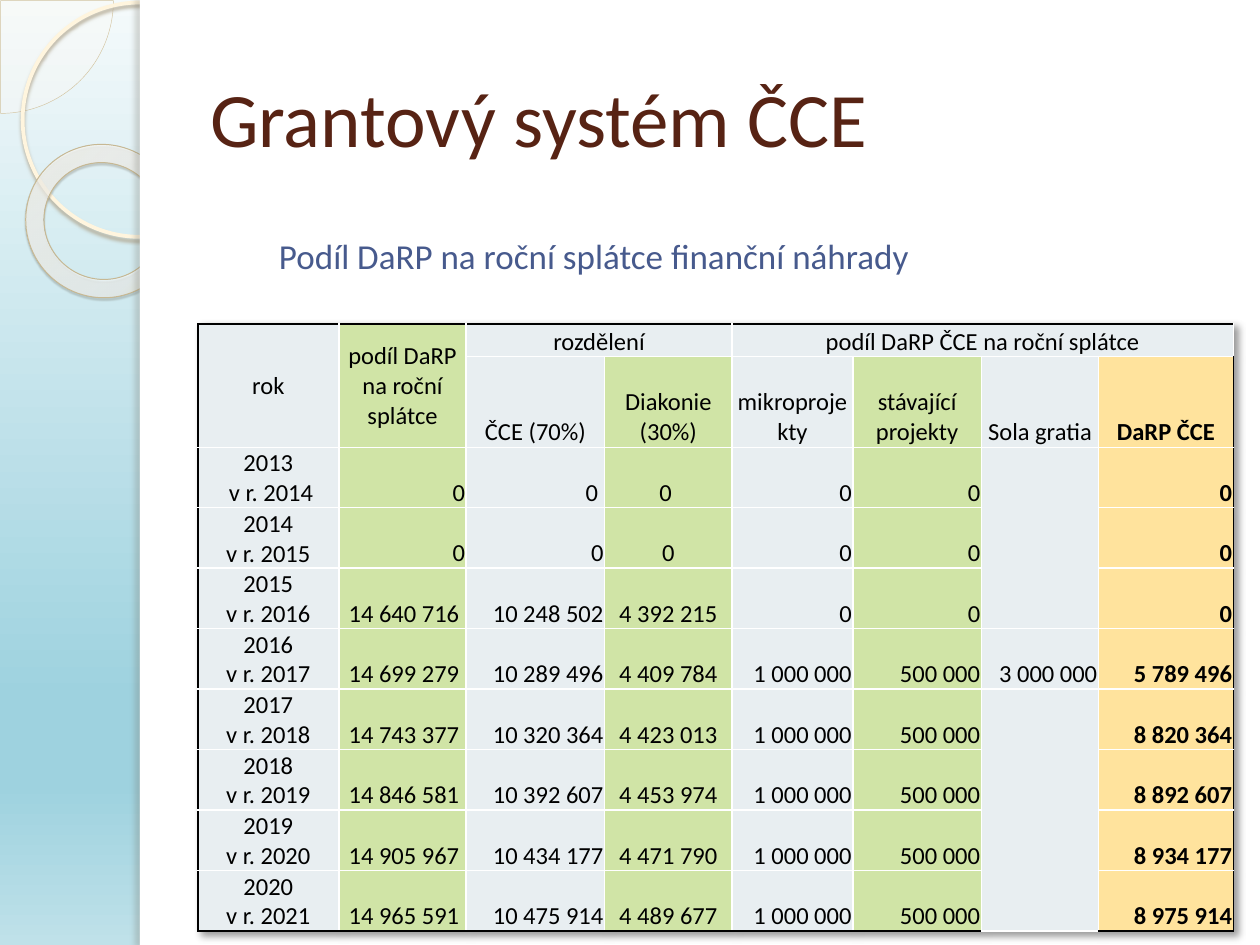
"""Builds the grant system slide with its table of yearly shares."""
from lxml import etree
from pptx import Presentation
from pptx.dml.color import RGBColor
from pptx.enum.shapes import MSO_SHAPE
from pptx.enum.text import MSO_ANCHOR, PP_ALIGN
from pptx.oxml.ns import qn
from pptx.util import Inches, Pt

LEFT, MID, RIGHT = PP_ALIGN.LEFT, PP_ALIGN.CENTER, PP_ALIGN.RIGHT
CENTRE, BOTTOM = MSO_ANCHOR.MIDDLE, MSO_ANCHOR.BOTTOM
PIE, OVAL, DONUT, RECT = MSO_SHAPE.PIE, MSO_SHAPE.OVAL, MSO_SHAPE.DONUT, MSO_SHAPE.RECTANGLE

HUES = {
    "title": "572314", "sub": "475A8D", "black": "000000", "white": "FFFFFF",
    "grey": "E8EEF1", "green": "D0E4A6", "gold": "FFE39D",
    "pie": "FEFAF4", "edge": "D3C39F", "ring": "FFF5DE", "rim": "C7B893",
}
SKY = [(0, "F4FAFB", 100), (74, "9ED2DF", 100), (83, "9ED2DF", 100), (100, "BFE1E9", 100)]
GLOW = [(0, "FFFCF6", 70), (70, "FFFEFB", 55), (100, "F0D28E", 60)]

TITLE = "Grantový systém ČCE"
SUB = "Podíl DaRP na roční splátce finanční náhrady"
HEAD = [
    ["rok", "podíl DaRP na roční splátce", "rozdělení", "",
     "podíl DaRP ČCE na roční splátce", "", "", ""],
    ["", "", "ČCE (70%)", "Diakonie (30%)", "mikroprojekty",
     "stávající projekty", "Sola gratia", "DaRP ČCE"],
]
BODY = [
    ["2013\n v r. 2014", "0", "0 ", "0 ", "0", "0", "", "0"],
    ["2014\nv r. 2015", "0", "0", "0", "0", "0", "", "0"],
    ["2015\nv r. 2016", "14 640 716 ", "10 248 502", "4 392 215", "0", "0", "", "0"],
    ["2016\nv r. 2017", "14 699 279 ", "10 289 496", "4 409 784",
     "1 000 000", "500 000", "3 000 000", "5 789 496"],
    ["2017\nv r. 2018", "14 743 377 ", "10 320 364", "4 423 013",
     "1 000 000", "500 000", "", "8 820 364"],
    ["2018\nv r. 2019", "14 846 581 ", "10 392 607", "4 453 974",
     "1 000 000", "500 000", "", "8 892 607"],
    ["2019\nv r. 2020", "14 905 967 ", "10 434 177", "4 471 790",
     "1 000 000", "500 000", "", "8 934 177"],
    ["2020\nv r. 2021", "14 965 591 ", "10 475 914", "4 489 677",
     "1 000 000", "500 000", "", "8 975 914"],
]
ROWS = HEAD + BODY
WIDTHS = [1.12, 1.01, 1.1, 1.01, 0.96, 1.02, 0.93, 1.07]
HEIGHTS = [0.26, 0.72] + [0.48] * len(BODY)
FILLS = ["grey", "green", "grey", "green", "grey", "green", "grey", "gold"]
ALIGNS = [MID, RIGHT, RIGHT, MID, RIGHT, RIGHT, RIGHT, RIGHT]
SPANS = [(0, 0, 1, 0), (0, 1, 1, 1), (0, 2, 0, 3), (0, 4, 0, 7), (2, 6, 4, 6), (6, 6, 9, 6)]


def rgb(name):
    return RGBColor.from_string(HUES[name])


def node(up, tag, **attrs):
    return etree.SubElement(up, qn("a:" + tag), {k: str(v) for k, v in attrs.items()})


def tint(up, hue, alpha):
    color = node(up, "srgbClr", val=hue)
    if alpha < 100:
        node(color, "alpha", val=alpha * 1000)


def blend(grad, stops):
    bag = grad.find(qn("a:gsLst"))
    for old in list(bag):
        bag.remove(old)
    for pos, hue, alpha in stops:
        tint(node(bag, "gs", pos=pos * 1000), hue, alpha)


def shade(bag, hue, alpha, blur, dist, turn):
    glow = node(bag, "outerShdw", blurRad=Pt(blur), dist=Pt(dist),
                dir=turn * 60000, algn="tl", rotWithShape=0)
    tint(glow, hue, alpha)


def put(frame, text, size=14, hue="black", bold=False, align=MID):
    for i, line in enumerate(text.split("\n")):
        para = frame.add_paragraph() if i else frame.paragraphs[0]
        para.alignment = align
        if not line:
            node(para._p, "endParaRPr", sz=size * 100)
            continue
        run = para.add_run()
        run.text = line
        font = run.font
        font.name, font.size, font.bold = "Calibri", Pt(size), bold
        font.color.rgb = rgb(hue)


def draw(slide, kind, box, fill=None, line=None, width=1, glow=None):
    shape = slide.shapes.add_shape(kind, *map(Inches, box))
    shape.shadow.inherit = False
    if fill:
        shape.fill.solid()
        shape.fill.fore_color.rgb = rgb(fill)
    else:
        shape.fill.background()
    if line:
        shape.line.color.rgb = rgb(line)
        shape.line.width = Pt(width)
    else:
        shape.line.fill.background()
    if glow:
        shade(shape.element.spPr.find(qn("a:effectLst")), *glow)
    return shape


def decor(slide):
    slide.background.fill.gradient()
    slide.background.fill.gradient_angle = 270
    blend(next(slide.element.iter(qn("a:gradFill"))), SKY)

    pie = draw(slide, PIE, (-0.89, -0.89, 1.79, 1.79), "pie", "edge", 0.25)
    pie.adjustments[0], pie.adjustments[1] = 0, 54
    node(next(pie.element.spPr.iter(qn("a:srgbClr"))), "alpha", val=33000)
    draw(slide, OVAL, (0.18, 0.02, 1.86, 1.86), None, "ring", 2.15,
         ("B0A68F", 85, 2, 2, 90))

    donut = draw(slide, DONUT, (0.2, 1.15, 1.23, 1.21), None, "rim", 0.58,
                 ("5A5444", 35, 1, 1.2, 75))
    donut.adjustments[0] = 0.12
    donut.rotation = 38.6
    donut.fill.gradient()
    grad = donut.element.spPr.find(qn("a:gradFill"))
    blend(grad, GLOW)
    grad.remove(grad.find(qn("a:lin")))
    node(node(grad, "path", path="circle"), "fillToRect",
         l=85000, t=100000, r=1000000, b=300000)

    draw(slide, RECT, (1.11, 0, 8.89, 7.5), "white")
    draw(slide, RECT, (1.11, 0, 0.08, 7.5), "white", glow=("736F63", 25, 3, 3, 180))


def label(slide, box, text, wrap, **form):
    frame = slide.shapes.add_textbox(*map(Inches, box)).text_frame
    frame.word_wrap = wrap
    frame.vertical_anchor = CENTRE
    put(frame, text, **form)


def edges(cell, row, col):
    outer = {"lnL": col == 0, "lnR": col == len(WIDTHS) - 1,
             "lnT": row == 0, "lnB": row == len(ROWS) - 1}
    props = cell._tc.get_or_add_tcPr()
    for i, (tag, dark) in enumerate(outer.items()):
        line = node(props, tag, w=Pt(1))
        tint(node(line, "solidFill"), HUES["black" if dark else "white"], 100)
        props.insert(i, line)


def grid(slide):
    table = slide.shapes.add_table(
        len(ROWS), len(WIDTHS), Inches(1.57), Inches(2.57),
        Inches(sum(WIDTHS)), Inches(sum(HEIGHTS))).table
    table.first_row = table.horz_banding = False
    props = table._tbl.tblPr
    bag = node(props, "effectLst")
    props.insert(0, bag)
    shade(bag, HUES["black"], 40, 4, 3, 45)
    for col, width in zip(table.columns, WIDTHS):
        col.width = Inches(width)
    for row, height in zip(table.rows, HEIGHTS):
        row.height = Inches(height)
    for r, row in enumerate(ROWS):
        for c, text in enumerate(row):
            cell = table.cell(r, c)
            cell.margin_left = cell.margin_right = cell.margin_top = Inches(0.01)
            cell.margin_bottom = 0
            cell.vertical_anchor = CENTRE if r == 0 and c < 2 else BOTTOM
            cell.fill.solid()
            cell.fill.fore_color.rgb = rgb("grey" if r == 0 and c != 1 else FILLS[c])
            put(cell.text_frame, text, bold=r > 0 and c == len(row) - 1,
                align=MID if r < len(HEAD) else ALIGNS[c])
            edges(cell, r, c)
    for top, left, low, right in SPANS:
        table.cell(top, left).merge(table.cell(low, right))


def main():
    deck = Presentation()
    deck.slide_width, deck.slide_height = Inches(10), Inches(7.5)
    slide = deck.slides.add_slide(deck.slide_layouts[6])
    decor(slide)
    label(slide, (1.57, 0.3, 8.2, 1.25), TITLE, True, size=44, hue="title", align=LEFT)
    grid(slide)
    label(slide, (1.74, 1.81, 5.95, 0.44), SUB, False, size=20, hue="sub")
    deck.save("out.pptx")


if __name__ == "__main__":
    main()
